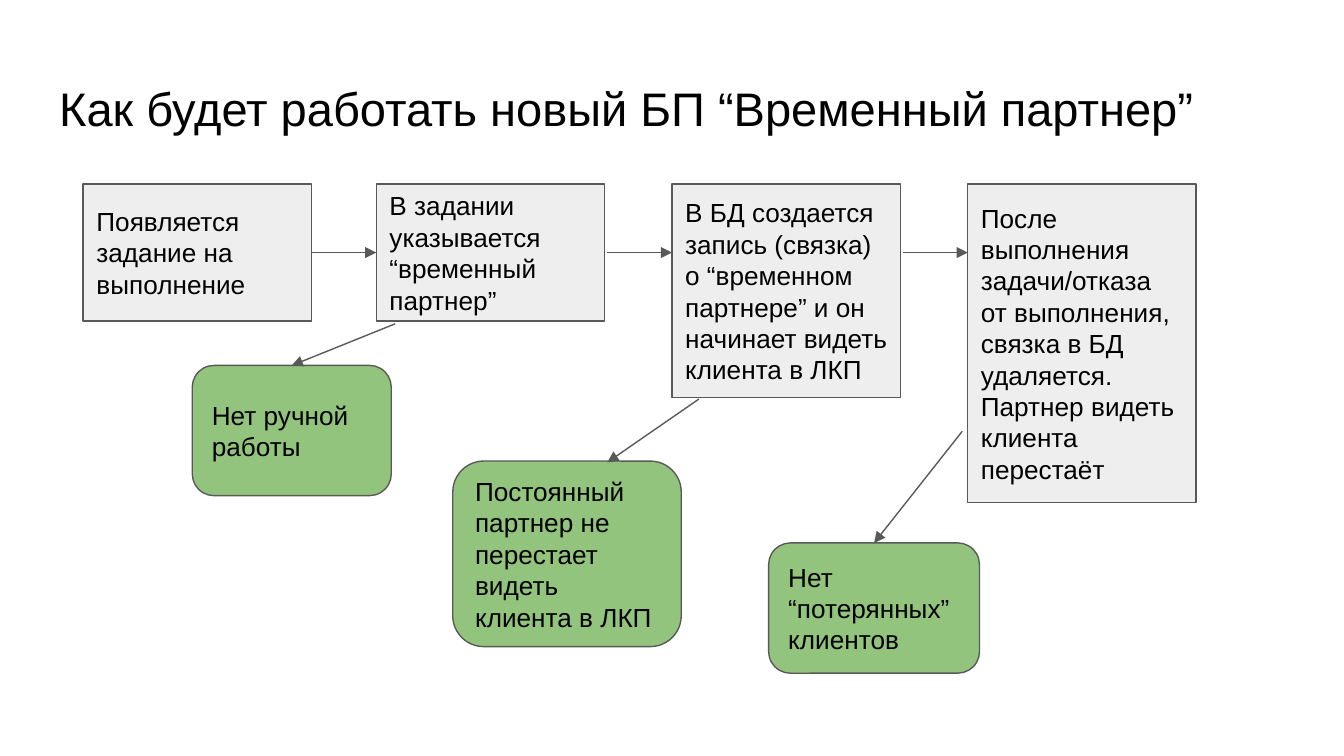
from typing import NamedTuple, Optional

import pptx
import pptx.dml.color
import pptx.enum.shapes
import pptx.enum.text
import pptx.oxml.ns
import pptx.util
from lxml import etree

Pt = pptx.util.Pt
Shapes = pptx.enum.shapes.MSO_SHAPE
Anchor = pptx.enum.text.MSO_ANCHOR

FONT = "Arial"
BLACK = "000000"
GREY = "595959"
STEP_FILL = "EEEEEE"
BENEFIT_FILL = "93C47D"
INSET = 7.2
STEP_TOP = 98.6
STEP_WIDTH = 122.4
ARROW_Y = 135.3
TOP, LEFT, RIGHT = 0, 1, 3


class Box(NamedTuple):
    text: str
    left: float
    top: float
    width: float
    height: float


class Arrow(NamedTuple):
    start: tuple[float, float]
    end: tuple[float, float]
    source: Optional[tuple[str, int]] = None
    target: Optional[tuple[str, int]] = None


STEPS = {
    "task": Box("Появляется задание на выполнение", 44.6, STEP_TOP, STEP_WIDTH, 73.4),
    "assign": Box("В задании указывается “временный партнер”", 201.6, STEP_TOP, STEP_WIDTH, 73.4),
    "link": Box(
        "В БД создается запись (связка) о “временном партнере” и он начинает видеть клиента в ЛКП",
        360, STEP_TOP, STEP_WIDTH, 114.5,
    ),
    "unlink": Box(
        "После выполнения задачи/отказа от выполнения, связка в БД удаляется. "
        "Партнер видеть клиента перестаёт",
        518.4, STEP_TOP, STEP_WIDTH, 170.6,
    ),
}

BENEFITS = {
    "no_manual": Box("Нет ручной работы", 103, 195.8, 106.6, 69.8),
    "no_lost": Box("Нет “потерянных” клиентов", 411.8, 290.9, 113, 69.8),
    "still_sees": Box(
        "Постоянный партнер не перестает видеть клиента в ЛКП", 242.6, 247, STEP_WIDTH, 99.4
    ),
}

ARROWS = [
    Arrow((167, ARROW_Y), (201.6, ARROW_Y), ("task", RIGHT), ("assign", LEFT)),
    Arrow((325.4, ARROW_Y), (360, ARROW_Y)),
    Arrow((483.8, ARROW_Y), (518.4, ARROW_Y)),
    Arrow((211.7, 173.5), (156.3, 195.8), target=("no_manual", TOP)),
    Arrow((374.4, 213.8), (325.4, 247.7)),
    Arrow((515.5, 231.1), (468.3, 290.9), target=("no_lost", TOP)),
]


def color(value: str) -> pptx.dml.color.RGBColor:
    return pptx.dml.color.RGBColor.from_string(value)


def write_text(shape, text: str, size: float, anchor) -> None:
    frame = shape.text_frame
    frame.word_wrap = True
    frame.auto_size = pptx.enum.text.MSO_AUTO_SIZE.NONE
    frame.vertical_anchor = anchor
    frame.margin_left = frame.margin_right = Pt(INSET)
    frame.margin_top = frame.margin_bottom = Pt(INSET)
    paragraph = frame.paragraphs[0]
    paragraph.alignment = pptx.enum.text.PP_ALIGN.LEFT
    run = paragraph.add_run()
    run.text = text
    run.font.name = FONT
    run.font.size = Pt(size)
    run.font.color.rgb = color(BLACK)


def draw_title(slide, text: str) -> None:
    title = slide.shapes.title
    title.left, title.top = Pt(24.5), Pt(35.3)
    title.width, title.height = Pt(671), Pt(45.4)
    write_text(title, text, 25.2, Anchor.TOP)


def draw_box(slide, box: Box, preset, fill: str):
    shape = slide.shapes.add_shape(
        preset, Pt(box.left), Pt(box.top), Pt(box.width), Pt(box.height)
    )
    shape.shadow.inherit = False
    shape.fill.solid()
    shape.fill.fore_color.rgb = color(fill)
    shape.line.color.rgb = color(GREY)
    shape.line.width = Pt(0.75)
    write_text(shape, box.text, 14, Anchor.MIDDLE)
    return shape


def draw_arrow(slide, arrow: Arrow, shapes: dict) -> None:
    connector = slide.shapes.add_connector(
        pptx.enum.shapes.MSO_CONNECTOR.STRAIGHT,
        *map(Pt, arrow.start),
        *map(Pt, arrow.end),
    )
    if arrow.source:
        name, side = arrow.source
        connector.begin_connect(shapes[name], side)
    if arrow.target:
        name, side = arrow.target
        connector.end_connect(shapes[name], side)
    connector.line.color.rgb = color(GREY)
    connector.line.width = Pt(0.75)
    line = connector.line._get_or_add_ln()
    etree.SubElement(line, pptx.oxml.ns.qn("a:tailEnd"), type="triangle")
    etree.SubElement(connector._element.spPr, pptx.oxml.ns.qn("a:effectLst"))


def main() -> None:
    presentation = pptx.Presentation()
    presentation.slide_width, presentation.slide_height = Pt(720), Pt(405)
    slide = presentation.slides.add_slide(presentation.slide_layouts[5])
    draw_title(slide, "Как будет работать новый БП “Временный партнер”")
    shapes = {}
    for name, box in STEPS.items():
        shapes[name] = draw_box(slide, box, Shapes.RECTANGLE, STEP_FILL)
    for name, box in BENEFITS.items():
        shapes[name] = draw_box(slide, box, Shapes.ROUNDED_RECTANGLE, BENEFIT_FILL)
    for arrow in ARROWS:
        draw_arrow(slide, arrow, shapes)
    presentation.save("out.pptx")


if __name__ == "__main__":
    main()
